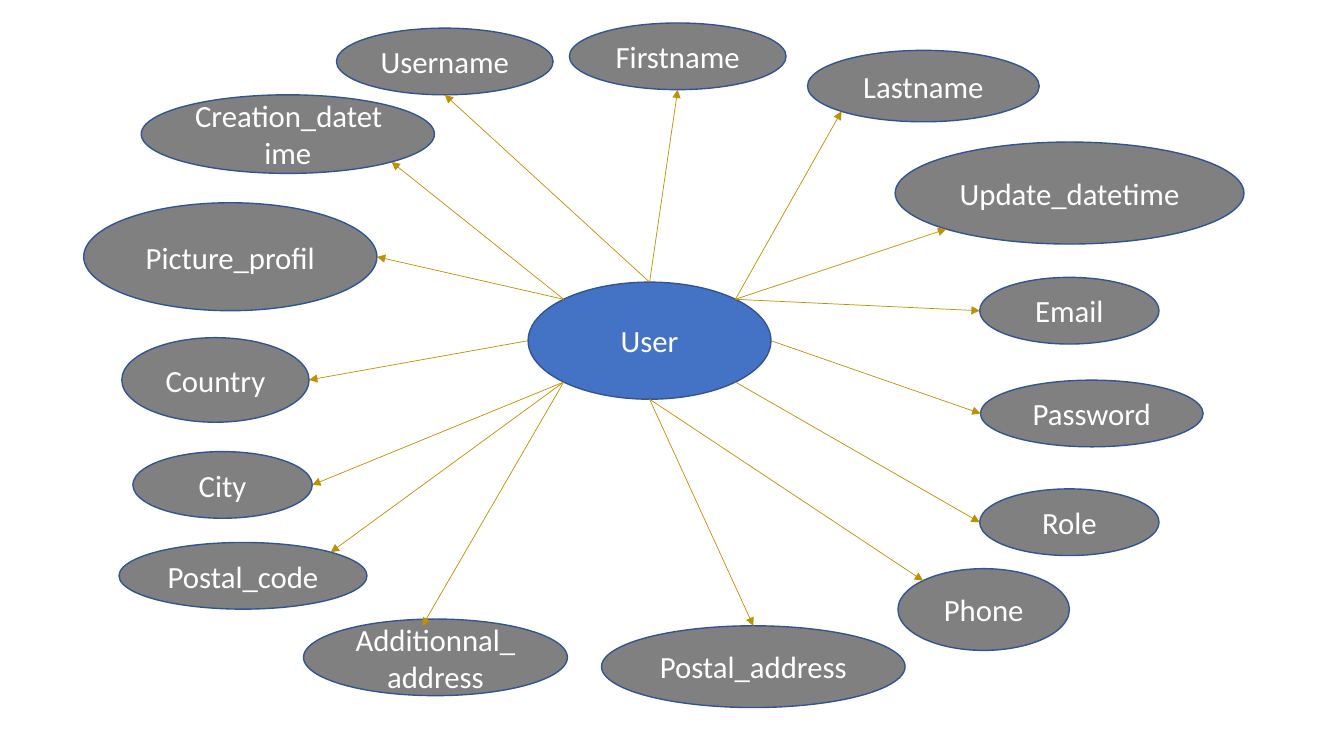
from typing import NamedTuple

from lxml import etree
from pptx import Presentation
from pptx.dml.color import RGBColor
from pptx.enum.shapes import MSO_CONNECTOR, MSO_SHAPE
from pptx.enum.text import MSO_ANCHOR, PP_ALIGN
from pptx.oxml.ns import qn
from pptx.util import Cm, Pt

ELLIPSE = MSO_SHAPE.OVAL
STRAIGHT = MSO_CONNECTOR.STRAIGHT
MIDDLE = MSO_ANCHOR.MIDDLE
CENTER = PP_ALIGN.CENTER

BLUE = "4472C4"
GREY = "808080"
WHITE = "FFFFFF"
OUTLINE = "325491"
PICTURE_OUTLINE = "2F5597"
GOLD = "BF9000"


class Site(NamedTuple):
    """A point on an ellipse, as fractions of its width and height."""
    across: float
    down: float


NEAR, FAR = 0.5 - 0.5 ** 1.5, 0.5 + 0.5 ** 1.5  # 45-degree points
TOP, BOTTOM = Site(0.5, 0), Site(0.5, 1)
LEFT, RIGHT = Site(0, 0.5), Site(1, 0.5)
TOP_LEFT, TOP_RIGHT = Site(NEAR, NEAR), Site(FAR, NEAR)
BOTTOM_LEFT, BOTTOM_RIGHT = Site(NEAR, FAR), Site(FAR, FAR)
INSIDE_TOP = Site(0.45, 0.09)


class Node(NamedTuple):
    """An ellipse, measured in centimetres."""
    name: str
    left: float
    top: float
    width: float
    height: float
    outline: str = OUTLINE

    def point(self, site: Site) -> tuple:
        return (Cm(self.left + self.width * site.across),
                Cm(self.top + self.height * site.down))


class Attribute(NamedTuple):
    """An attribute of the user with the two ends of its arrow."""
    node: Node
    start: Site
    end: Site


USER = Node("User", 13.31, 7.11, 6.12, 2.95)

ATTRIBUTES = [
    Attribute(Node("Firstname", 14.35, 0.58, 5.46, 1.68), TOP, BOTTOM),
    Attribute(Node("Lastname", 20.35, 1.27, 5.84, 1.8), TOP_RIGHT, BOTTOM_LEFT),
    Attribute(Node("Update_datetime", 22.56, 3.58, 8.79, 2.57), TOP_RIGHT, BOTTOM_LEFT),
    Attribute(Node("Email", 24.69, 6.99, 4.52, 1.68), TOP_RIGHT, LEFT),
    Attribute(Node("Password", 24.71, 9.58, 5.61, 1.68), RIGHT, LEFT),
    Attribute(Node("Role", 24.69, 12.32, 4.52, 1.68), BOTTOM_RIGHT, LEFT),
    Attribute(Node("Phone", 22.63, 14.33, 4.32, 2.06), BOTTOM, TOP_LEFT),
    Attribute(Node("Postal_address", 15.16, 15.77, 7.65, 2.06), BOTTOM, TOP),
    Attribute(Node("Additionnal_address", 7.65, 15.6, 6.65, 1.93), BOTTOM_LEFT, INSIDE_TOP),
    Attribute(Node("Postal_code", 3, 13.67, 6.25, 1.68), BOTTOM_LEFT, TOP_RIGHT),
    Attribute(Node("City", 3.35, 11.38, 4.52, 1.68), BOTTOM_LEFT, RIGHT),
    Attribute(Node("Country", 3.07, 8.51, 4.72, 2.13), LEFT, RIGHT),
    Attribute(Node("Picture_profil", 2.11, 5.11, 7.39, 2.72, PICTURE_OUTLINE), TOP_LEFT, RIGHT),
    Attribute(Node("Creation_datetime", 3.56, 2.39, 7.39, 1.98), TOP_LEFT, BOTTOM_RIGHT),
    Attribute(Node("Username", 8.48, 0.71, 5.46, 1.68), TOP, BOTTOM),
]


def paint(target, color: str) -> None:
    """Give a fill a solid colour."""
    target.solid()
    target.fore_color.rgb = RGBColor.from_string(color)


def draw_node(page, node: Node, fill: str) -> None:
    box = page.shapes.add_shape(ELLIPSE, Cm(node.left), Cm(node.top),
                                Cm(node.width), Cm(node.height))
    box.shadow.inherit = False
    paint(box.fill, fill)
    paint(box.line.fill, node.outline)
    box.line.width = Pt(1)
    frame = box.text_frame
    frame.text = node.name
    frame.word_wrap = True
    frame.vertical_anchor = MIDDLE
    para = frame.paragraphs[0]
    para.alignment = CENTER
    font = para.runs[0].font
    font.name = "Calibri"
    font.size = Pt(22)
    paint(font.fill, WHITE)


def draw_arrow(page, attribute: Attribute) -> None:
    arrow = page.shapes.add_connector(STRAIGHT, *USER.point(attribute.start),
                                      *attribute.node.point(attribute.end))
    paint(arrow.line.fill, GOLD)
    arrow.line.width = Pt(0.5)
    properties = arrow.element.spPr
    etree.SubElement(properties.find(qn("a:ln")), qn("a:tailEnd"), type="triangle")
    etree.SubElement(properties, qn("a:effectLst"))


def main() -> None:
    deck = Presentation()
    deck.slide_width, deck.slide_height = Cm(33.87), Cm(19.05)
    page = deck.slides.add_slide(deck.slide_layouts[6])

    # Entity and its attributes
    draw_node(page, USER, BLUE)
    for attribute in ATTRIBUTES:
        draw_node(page, attribute.node, GREY)

    # Arrows from the entity
    for attribute in ATTRIBUTES:
        draw_arrow(page, attribute)

    deck.save("out.pptx")


if __name__ == "__main__":
    main()
